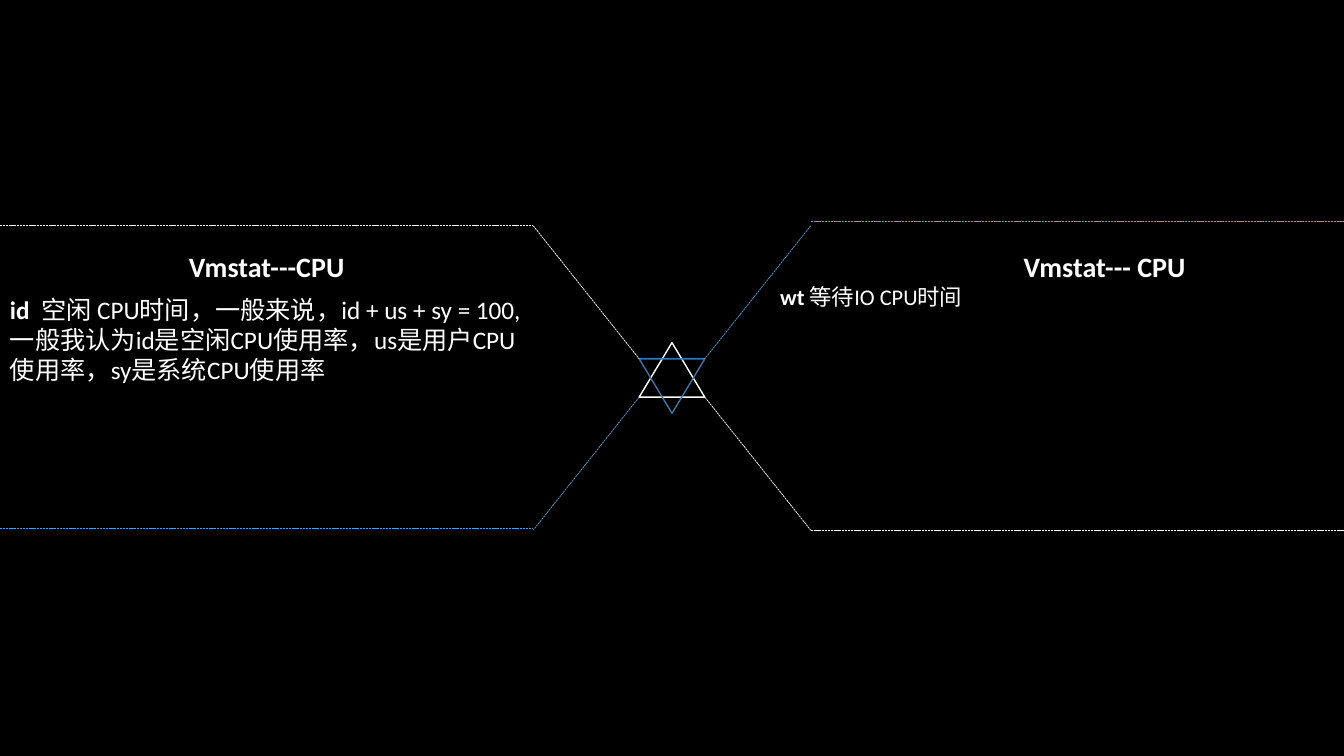
from lxml.etree import SubElement
from pptx import Presentation
from pptx.dml.color import RGBColor
from pptx.enum.dml import MSO_LINE
from pptx.enum.shapes import MSO_CONNECTOR, MSO_SHAPE
from pptx.enum.text import MSO_AUTO_SIZE, PP_ALIGN
from pptx.oxml.ns import qn
from pptx.util import Inches, Pt

WHITE, BLUE, DEEP = "FFFFFF", "5B9BD5", "43739E"


def color(text):
    return RGBColor.from_string(text)


class Board:
    """Places elements in percent of the slide's width and height."""
    font = "Calibri"

    def __init__(self, deck):
        self.wide, self.high = deck.slide_width, deck.slide_height
        self.slide = deck.slides.add_slide(deck.slide_layouts[6])
        fill = self.slide.background.fill
        fill.solid()
        fill.fore_color.rgb = color("000000")

    def spot(self, x, y):
        return round(self.wide * x / 100), round(self.high * y / 100)

    def line(self, start, end, hue):
        item = self.slide.shapes.add_connector(
            MSO_CONNECTOR.STRAIGHT, *self.spot(*start), *self.spot(*end))
        item.line.color.rgb = color(hue)
        item.line.width = Pt(0.5)
        item.line.dash_style = MSO_LINE.SQUARE_DOT
        SubElement(item._element.spPr, qn("a:effectLst"))

    def delta(self, group, box, hue, turn=0):
        item = group.shapes.add_shape(
            MSO_SHAPE.ISOSCELES_TRIANGLE, *self.spot(*box[:2]), *self.spot(*box[2:]))
        item.shadow.inherit = False
        item.fill.background()
        item.line.color.rgb = color(hue)
        item.line.width = Pt(1)
        item.rotation = turn

    def text(self, box, runs, size, align=PP_ALIGN.LEFT):
        item = self.slide.shapes.add_textbox(*self.spot(*box[:2]), *self.spot(*box[2:]))
        frame = item.text_frame
        frame.word_wrap = True
        frame.auto_size = MSO_AUTO_SIZE.SHAPE_TO_FIT_TEXT
        para = frame.paragraphs[0]
        para.alignment = align
        for words, bold in runs:
            run = para.add_run()
            run.text = words
            run.font.name = self.font
            run.font.size = Pt(size)
            run.font.bold = bold
            run.font.color.rgb = color(WHITE)


def main():
    deck = Presentation()
    deck.slide_width, deck.slide_height = Inches(13.33), Inches(7.5)
    board = Board(deck)

    # Frame columns and rows, mirrored about the slide's centre
    bend, tip = 39.68, 47.56
    top, waist = 29.87, 47.47
    far, near = 100 - bend, 100 - tip
    base, hip = 100 - top, 100 - waist
    rise = 29.33

    # Star of two triangles
    star = board.slide.shapes.add_group_shape()
    span, tall = near - tip, 7.2
    board.delta(star, (tip, hip - tall, span, tall), WHITE)
    board.delta(star, (tip, waist, span, tall), DEEP, 180)

    # Slanted and level dashed lines
    for start, end, hue in (
            ((bend, top), (tip, waist), WHITE),
            ((near, hip), (far, base), WHITE),
            ((tip, hip), (bend, base), BLUE),
            ((far, top), (near, waist), BLUE),
            ((0, top), (bend, top), WHITE),
            ((far, base), (100, base), WHITE),
            ((far, rise), (100, rise), BLUE),
            ((0, top + 40), (bend, top + 40), BLUE)):
        board.line(start, end, hue)

    # Headings
    for left, words in ((0, "Vmstat---CPU"), (62.34, "Vmstat--- CPU")):
        board.text((left, 32.4, bend, 5.87), [(words, True)], 20, PP_ALIGN.CENTER)

    # Body texts
    board.text((0, 38.27, bend, 13.47), [
        ("id", True),
        ("  空闲 CPU时间，一般来说，id + us + sy = 100,"
         "一般我认为id是空闲CPU使用率，us是用户CPU使用率，sy是系统CPU使用率", False)], 18)
    board.text((57.31, 36.8, 41.86, 4.93), [
        ("wt", True), (" 等待IO CPU时间", False)], 16)

    deck.save("out.pptx")


if __name__ == "__main__":
    main()
